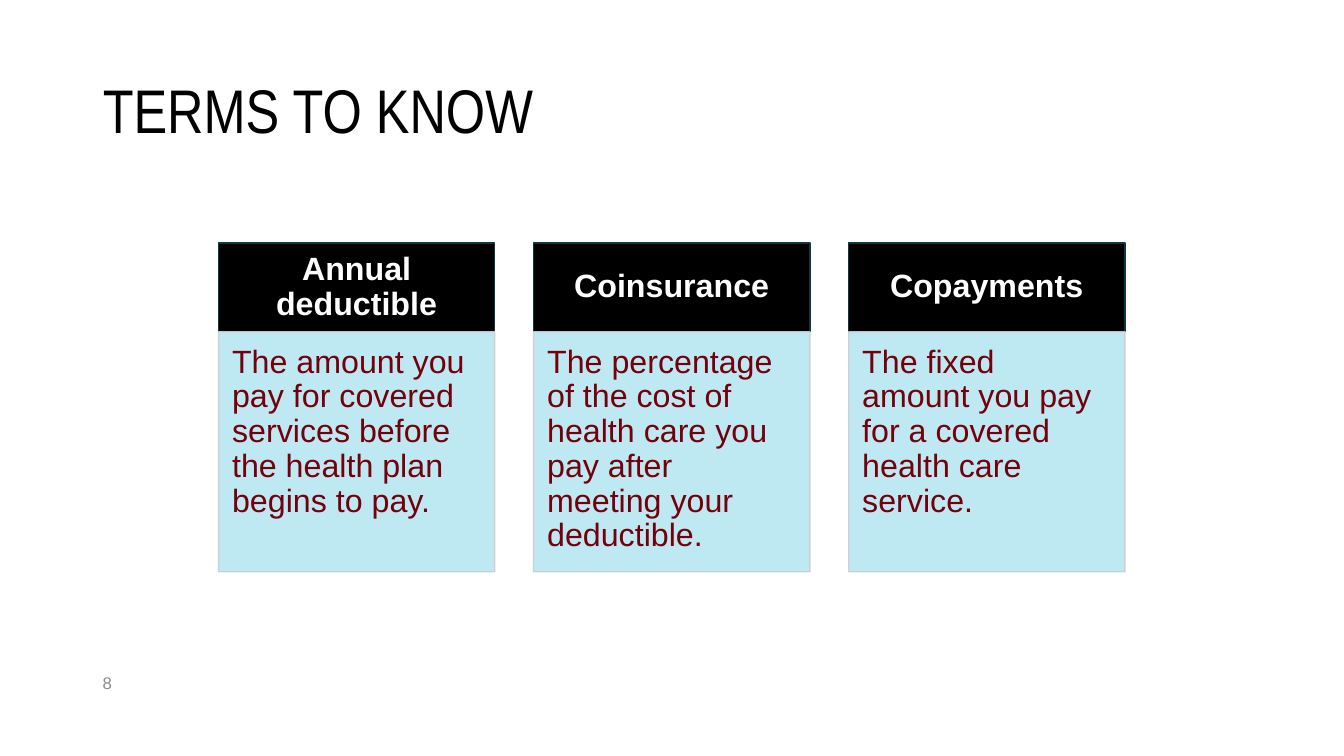
"""Build the slide that defines three health insurance cost terms."""
from dataclasses import dataclass

from lxml.etree import SubElement
from pptx import Presentation
from pptx.dml.color import RGBColor
from pptx.dml.fill import FillFormat
from pptx.enum.shapes import MSO_SHAPE as Preset
from pptx.enum.text import MSO_ANCHOR as Anchor, MSO_AUTO_SIZE as AutoSize, PP_ALIGN as Align
from pptx.oxml.ns import qn
from pptx.slide import Slide
from pptx.text.text import TextFrame
from pptx.util import Cm, Pt

CARD_LEFT, CARD_TOP, CARD_WIDTH, CARD_PITCH = 5.51, 6.12, 6.96, 7.94
HEADER_HEIGHT, BODY_HEIGHT = 2.24, 6.05
MARGIN_LEFT = 2.34


@dataclass(frozen=True)
class Term:
    name: str
    meaning: str


@dataclass(frozen=True)
class TextStyle:
    size: float
    color: str
    font: str = "Arial"
    bold: bool = False
    align: Align = Align.LEFT
    anchor: Anchor = Anchor.MIDDLE
    spacing: float = 1.0
    insets: tuple[float, float, float, float] = (0.25, 0.13, 0.25, 0.13)


@dataclass(frozen=True)
class PanelStyle:
    fill: str
    line: str
    text: TextStyle
    opacity: int = 100


TITLE = TextStyle(44, "000000", font="Arial Narrow", spacing=0.9)
PAGE_NUMBER = TextStyle(12, "8C8C8C")
HEADER = PanelStyle("000000", "0D3841", TextStyle(
    23, "FFFFFF", bold=True, align=Align.CENTER, spacing=0.9,
    insets=(0.46, 0.25, 0.46, 0.25)))
BODY = PanelStyle("B7E7F1", "CCCECF", TextStyle(
    23, "73000A", anchor=Anchor.TOP, spacing=0.9,
    insets=(0.34, 0.34, 0.46, 0.51)), opacity=90)

TERMS = (
    Term("Annual deductible",
         "The amount you pay for covered services before the health plan begins to pay."),
    Term("Coinsurance",
         "The percentage of the cost of health care you pay after meeting your deductible."),
    Term("Copayments",
         "The fixed amount you pay for a covered health care service."),
)


def paint(fill: FillFormat, color: str, opacity: int = 100) -> None:
    """Fill with a hex colour at an opacity in percent."""
    fill.solid()
    fill.fore_color.rgb = RGBColor.from_string(color)
    if opacity < 100:
        for node in fill._xPr.iter(qn("a:srgbClr")):
            SubElement(node, qn("a:alpha"), val=str(opacity * 1000))


def write(frame: TextFrame, text: str, style: TextStyle) -> None:
    """Put one styled paragraph in a text frame."""
    frame.text = text
    frame.word_wrap = True
    frame.auto_size = AutoSize.NONE
    frame.vertical_anchor = style.anchor
    left, top, right, bottom = (Cm(inset) for inset in style.insets)
    frame.margin_left, frame.margin_top = left, top
    frame.margin_right, frame.margin_bottom = right, bottom
    para = frame.paragraphs[0]
    para.alignment = style.align
    para.line_spacing = style.spacing
    para.font.name = style.font
    para.font.size = Pt(style.size)
    para.font.bold = style.bold
    paint(para.font.fill, style.color)


def add_panel(page: Slide, left: float, top: float, height: float,
              text: str, style: PanelStyle) -> None:
    """Draw one outlined rectangle with its text."""
    box = page.shapes.add_shape(
        Preset.RECTANGLE, Cm(left), Cm(top), Cm(CARD_WIDTH), Cm(height))
    box.shadow.inherit = False
    paint(box.fill, style.fill, style.opacity)
    paint(box.line.fill, style.line, style.opacity)
    box.line.width = Pt(1)
    write(box.text_frame, text, style.text)


def main() -> None:
    """Create and save the deck."""
    deck = Presentation()
    deck.slide_width, deck.slide_height = Cm(33.87), Cm(19.05)
    page = deck.slides.add_slide(deck.slide_layouts[5])

    title = page.shapes.title
    title.left, title.top = Cm(MARGIN_LEFT), Cm(1.02)
    title.width, title.height = Cm(29.21), Cm(3.68)
    write(title.text_frame, "TERMS TO KNOW", TITLE)

    number = page.shapes.add_textbox(Cm(MARGIN_LEFT), Cm(16.69), Cm(7.32), Cm(1.02))
    write(number.text_frame, "8", PAGE_NUMBER)

    for index, term in enumerate(TERMS):
        left = CARD_LEFT + index * CARD_PITCH
        add_panel(page, left, CARD_TOP, HEADER_HEIGHT, term.name, HEADER)
        add_panel(page, left, CARD_TOP + HEADER_HEIGHT, BODY_HEIGHT, term.meaning, BODY)

    deck.save("out.pptx")


if __name__ == "__main__":
    main()
